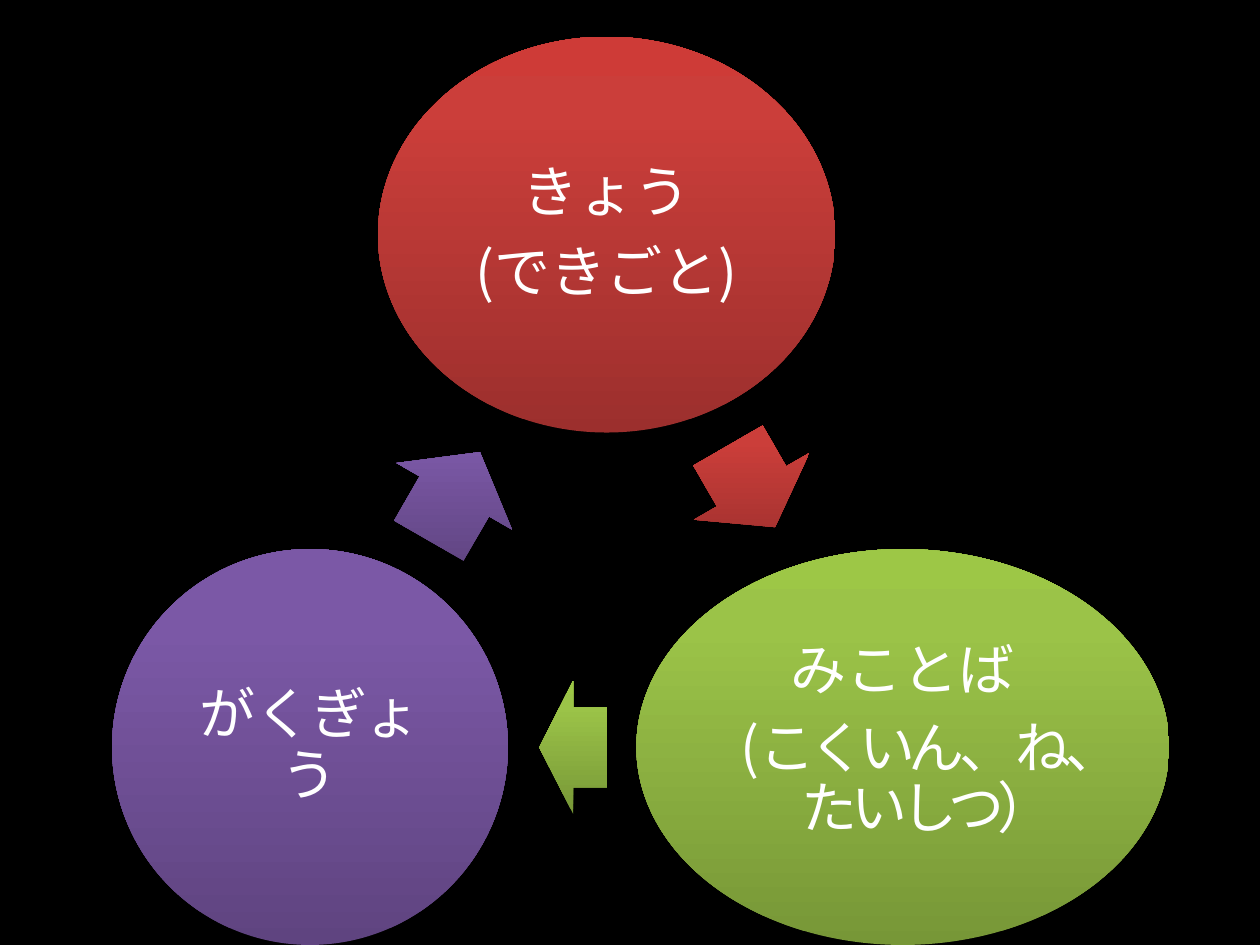
import dataclasses

import lxml.etree
import pptx
import pptx.dml.color
import pptx.enum.shapes
import pptx.enum.text
import pptx.oxml
import pptx.oxml.ns
import pptx.util

Cm = pptx.util.Cm
Pt = pptx.util.Pt
MSO_SHAPE = pptx.enum.shapes.MSO_SHAPE
RGBColor = pptx.dml.color.RGBColor

FONT = "Noto Sans CJK KR"
COLORS = {"background": "000000", "text": "FFFFFF", "shadow": "000000"}
GRADIENTS = {
    "red": ("9C2F2D", "CB3E3A", "CE3B37"),
    "green": ("779737", "9BC348", "9DC746"),
    "purple": ("5F4480", "7B58A6", "7C57A8"),
}
STOPS = (0, 80, 100)
CIRCLE_HEIGHT = 7.98
ARROW_HEIGHT = 2.69
LOWER_TOP = 11.07


@dataclasses.dataclass
class Line:
    text: str
    spacing: float = 0.9
    tracking: float = 0


@dataclasses.dataclass
class Stage:
    """One ellipse of the cycle and the arrow to the next; lengths in cm."""
    color: str
    left: float
    top: float
    width: float
    lines: list[Line]
    arrow_left: float
    arrow_top: float
    arrow_width: float
    arrow_rotation: float


STAGES = [
    Stage("red", 7.62, 0.74, 9.22, [Line("きょう"), Line("(できごと)")],
          14.2, 8.46, 1.9, 60),
    Stage("green", 12.83, LOWER_TOP, 10.74,
          [Line("みことば", spacing=0.7),
           Line("(こくいん、 ね、　たいしつ）", tracking=-3.5)],
          10.87, 13.72, 1.37, 180),
    Stage("purple", 2.26, LOWER_TOP, CIRCLE_HEIGHT, [Line("がくぎょう")],
          8.13, 8.66, 2.06, 300),
]


def style_shape(shape, color: str) -> None:
    """Give a bottom-to-top gradient that ignores rotation, and a soft shadow."""
    shape.line.fill.background()
    namespace = pptx.oxml.ns.nsdecls("a")
    stops = "".join(
        f'<a:gs pos="{stop * 1000}"><a:srgbClr val="{value}"/></a:gs>'
        for stop, value in zip(STOPS, GRADIENTS[color])
    )
    gradient = pptx.oxml.parse_xml(
        f'<a:gradFill {namespace} rotWithShape="0"><a:gsLst>{stops}</a:gsLst>'
        '<a:lin ang="16200000" scaled="0"/></a:gradFill>'
    )
    shadow = pptx.oxml.parse_xml(
        f'<a:effectLst {namespace}><a:outerShdw blurRad="{Pt(3.1)}" '
        f'dist="{Pt(1.8)}" dir="5400000" rotWithShape="0">'
        f'<a:srgbClr val="{COLORS["shadow"]}"><a:alpha val="35000"/></a:srgbClr>'
        '</a:outerShdw></a:effectLst>'
    )
    properties = shape._element.spPr
    properties.find(pptx.oxml.ns.qn("a:prstGeom")).addnext(gradient)
    properties.append(shadow)


def write_lines(text_frame, lines: list[Line]) -> None:
    text_frame.word_wrap = True
    text_frame.vertical_anchor = pptx.enum.text.MSO_ANCHOR.MIDDLE
    for side in ("left", "top", "right", "bottom"):
        setattr(text_frame, f"margin_{side}", Cm(0.1))
    text_frame.text = "\n".join(line.text for line in lines)
    for paragraph, line in zip(text_frame.paragraphs, lines):
        paragraph.alignment = pptx.enum.text.PP_ALIGN.CENTER
        paragraph.line_spacing = line.spacing
        paragraph.space_after = Pt(11.2)
        for run in paragraph.runs:
            run.font.size = Pt(32)
            run.font.name = FONT
            run.font.color.rgb = RGBColor.from_string(COLORS["text"])
            properties = run._r.get_or_add_rPr()
            east_asian = lxml.etree.SubElement(properties, pptx.oxml.ns.qn("a:ea"))
            east_asian.set("typeface", FONT)
            if line.tracking:
                properties.set("spc", str(round(line.tracking * 100)))


def draw_stage(slide, stage: Stage) -> None:
    ellipse = slide.shapes.add_shape(
        MSO_SHAPE.OVAL, Cm(stage.left), Cm(stage.top),
        Cm(stage.width), Cm(CIRCLE_HEIGHT))
    style_shape(ellipse, stage.color)
    write_lines(ellipse.text_frame, stage.lines)

    arrow = slide.shapes.add_shape(
        MSO_SHAPE.RIGHT_ARROW, Cm(stage.arrow_left), Cm(stage.arrow_top),
        Cm(stage.arrow_width), Cm(ARROW_HEIGHT))
    arrow.adjustments[0] = 0.6
    arrow.adjustments[1] = 0.5
    arrow.rotation = stage.arrow_rotation
    style_shape(arrow, stage.color)


def main() -> None:
    presentation = pptx.Presentation()
    presentation.slide_width = Cm(25.4)
    presentation.slide_height = Cm(19.05)
    slide = presentation.slides.add_slide(presentation.slide_layouts[6])
    background = slide.background.fill
    background.solid()
    background.fore_color.rgb = RGBColor.from_string(COLORS["background"])
    for stage in STAGES:
        draw_stage(slide, stage)
    presentation.save("out.pptx")


if __name__ == "__main__":
    main()
